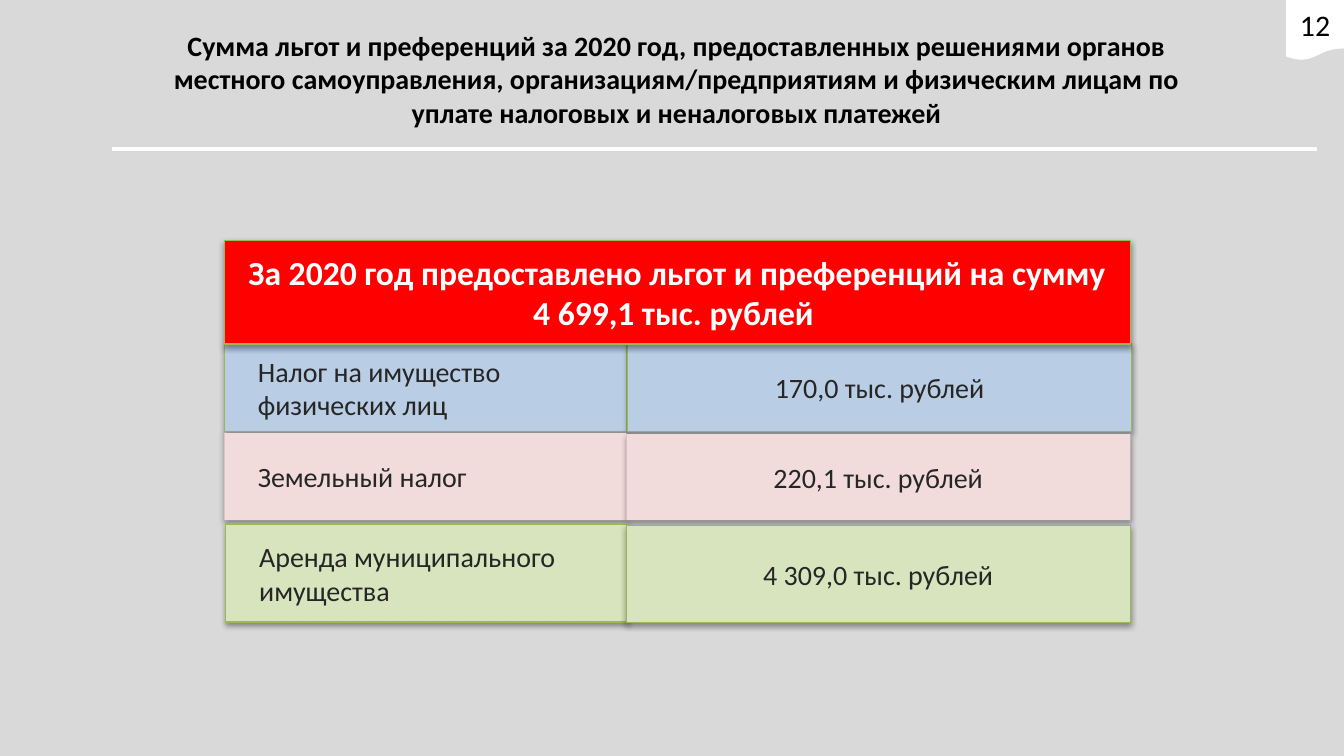
"""Builds the slide on tax reliefs and preferences granted in 2020."""
from lxml.etree import SubElement
from pptx import Presentation
from pptx.dml.color import RGBColor
from pptx.enum.shapes import MSO_CONNECTOR, MSO_SHAPE
from pptx.enum.text import MSO_ANCHOR, MSO_AUTO_SIZE, PP_ALIGN
from pptx.oxml.ns import qn
from pptx.util import Inches, Pt

TITLE = (
    "Сумма льгот и преференций за 2020 год, предоставленных решениями органов "
    "местного самоуправления, организациям/предприятиям и физическим лицам по "
    "уплате налоговых и неналоговых платежей"
)
TOTAL = "За 2020 год предоставлено льгот и преференций на сумму\n4 699,1 тыс. рублей "
PAGE = "12"
ROWS = [
    ("Налог на имущество\nфизических лиц", (1.67, 2.56),
     "170,0 тыс. рублей", (4.67, 2.56), 3.21, "blue", "edge"),
    ("Земельный налог", (1.67, 3.22),
     "220,1 тыс. рублей", (4.66, 3.23), 3.87, "pink", None),
    ("Аренда муниципального\nимущества", (1.68, 3.9),
     "4 309,0 тыс. рублей", (4.66, 3.91), 4.63, "green", "edge"),
]
THEME = {
    "font": "Calibri",
    "back": "D9D9D9", "white": "FFFFFF", "black": "000000", "ink": "262626",
    "red": "FF0000", "blue": "B9CDE5", "pink": "F2DCDB", "green": "D7E4BD",
    "edge": "98B955",
    "body": 15, "head": 18, "page": 16,
}
WIDE, HIGH = 10, 10 * 9 / 16
LABEL, VALUE = 2.99, 3.75
INDENT = 0.15


def color(name):
    return RGBColor.from_string(THEME[name])


def write(shape, text, size, ink, bold=False, align=PP_ALIGN.CENTER, wrap=True):
    frame = shape.text_frame
    frame.text = text
    frame.word_wrap = wrap
    frame.auto_size = MSO_AUTO_SIZE.NONE
    frame.vertical_anchor = MSO_ANCHOR.MIDDLE
    for para in frame.paragraphs:
        para.alignment = align
        if align == PP_ALIGN.LEFT:
            para._p.get_or_add_pPr().set("marL", str(Inches(INDENT)))
        for run in para.runs:
            run.font.name = THEME["font"]
            run.font.size = Pt(THEME[size])
            run.font.bold = bold
            run.font.color.rgb = color(ink)


def place(shape, *box):
    shape.left, shape.top, shape.width, shape.height = map(Inches, box)


def block(slide, kind, box, fill, edge=None):
    shape = slide.shapes.add_shape(kind, *map(Inches, box))
    shape.fill.solid()
    shape.fill.fore_color.rgb = color(fill)
    if edge:
        shape.line.color.rgb = color(edge)
        shape.line.width = Pt(0.75)
    else:
        shape.line.fill.background()
    shape.shadow.inherit = False
    return shape


def card(slide, box, fill, edge):
    shape = block(slide, MSO_SHAPE.ROUNDED_RECTANGLE, box, fill, edge)
    shape.adjustments[0] = 0
    effects = shape._element.spPr.find(qn("a:effectLst"))
    shade = SubElement(effects, qn("a:outerShdw"), blurRad=str(Pt(3.1)),
                       dist=str(Pt(1.6)), dir="5400000", rotWithShape="0")
    tint = SubElement(shade, qn("a:srgbClr"), val=THEME["black"])
    SubElement(tint, qn("a:alpha"), val="38000")
    return shape


def main():
    deck = Presentation()
    deck.slide_width, deck.slide_height = Inches(WIDE), Inches(HIGH)
    slide = deck.slides.add_slide(deck.slide_layouts[5])
    slide.background.fill.solid()
    slide.background.fill.fore_color.rgb = color("back")

    title = slide.shapes.title
    place(title, 1.06, 0.06, 7.95, 1.05)
    write(title, TITLE, "body", "black", bold=True)

    for name, start, value, spot, base, fill, edge in ROWS:
        label = card(slide, (*start, LABEL, base - start[1]), fill, edge)
        write(label, name, "body", "ink", align=PP_ALIGN.LEFT, wrap=False)
        amount = card(slide, (*spot, VALUE, base - spot[1]), fill, edge)
        write(amount, value, "body", "ink", wrap=False)

    total = card(slide, (1.67, 1.79, LABEL + VALUE, 0.77), "red", "edge")
    write(total, TOTAL, "head", "white", bold=True, wrap=False)

    rule = slide.shapes.add_connector(
        MSO_CONNECTOR.STRAIGHT, *map(Inches, (0.83, 1.11, 9.8, 1.11)))
    rule.line.color.rgb = color("white")
    rule.line.width = Pt(2.25)
    SubElement(rule._element.spPr, qn("a:effectLst"))

    badge = block(slide, MSO_SHAPE.FLOWCHART_DOCUMENT, (9.57, 0, 0.43, 0.45), "white")
    badge.text_frame.margin_left = badge.text_frame.margin_right = 0
    write(badge, PAGE, "page", "black")

    deck.save("out.pptx")


if __name__ == "__main__":
    main()
